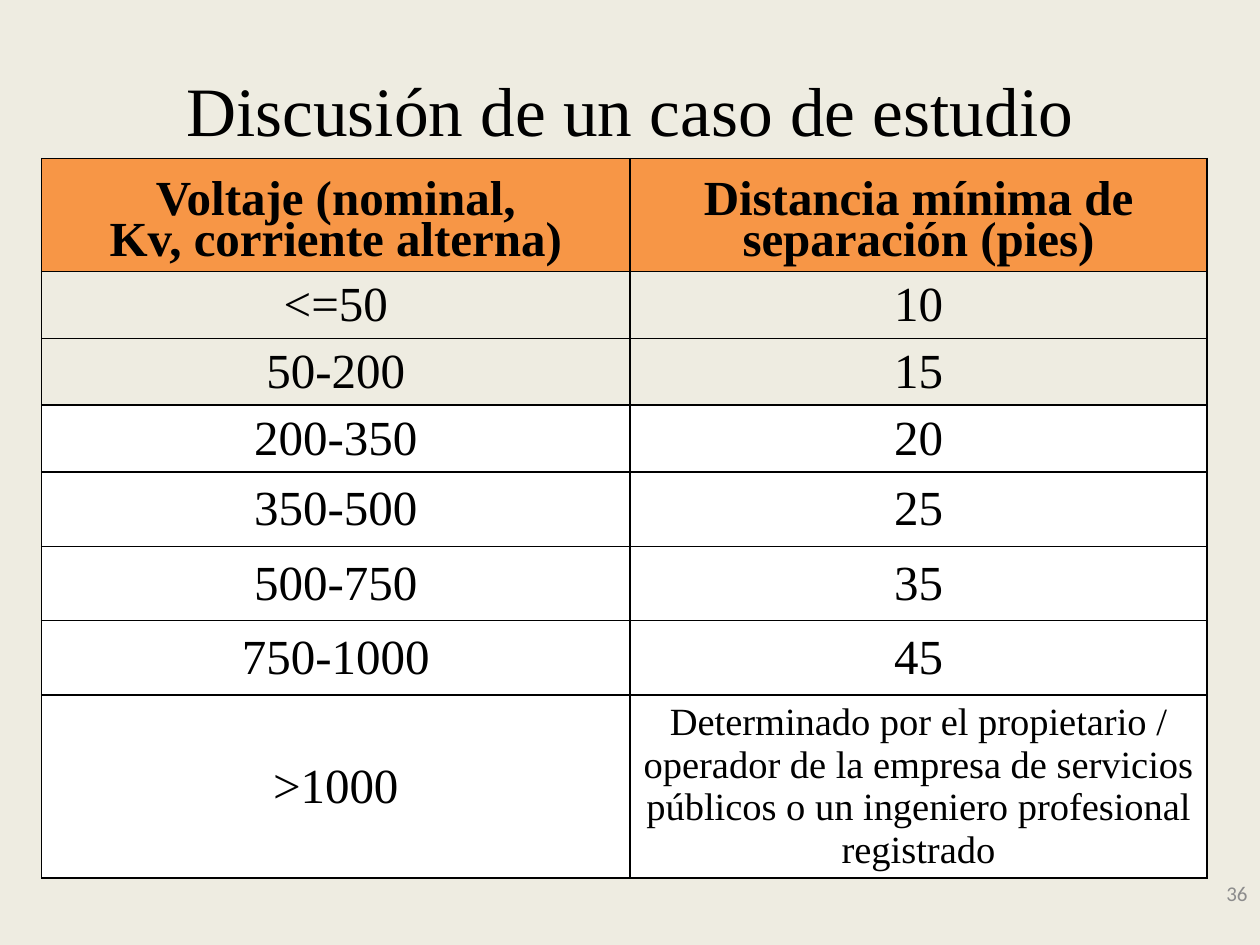
from lxml import etree
from pptx import Presentation
from pptx import util as u
from pptx.dml.color import RGBColor
from pptx.enum import text
from pptx.oxml import ns

INK, PAPER, ORANGE, WHITE, GREY = "000000", "EEECE1", "F79646", "FFFFFF", "8C8C8C"
SERIF, SANS = "Times New Roman", "Calibri"
CENTER, RIGHT = text.PP_ALIGN.CENTER, text.PP_ALIGN.RIGHT


def rgb(value):
    return RGBColor.from_string(value)


def set_attrs(obj, values):
    for name, value in values.items():
        setattr(obj, name, value)


class SlideBuilder:
    def __init__(self, prs):
        self.s = prs.slides.add_slide(prs.slide_layouts[6])
        self.font = {"name": SERIF, "size": u.Pt(28), "bold": False}

    def background(self, color):
        fill = self.s.background.fill
        fill.solid()
        fill.fore_color.rgb = rgb(color)

    def add_text(self, tf, content, color=INK, align=CENTER, spacing=None, **font):
        tf.word_wrap = True
        for i, line in enumerate(content.split("\n")):
            p = tf.add_paragraph() if i else tf.paragraphs[0]
            set_attrs(p, {"alignment": align, "line_spacing": spacing})
            r = p.add_run()
            r.text = line
            set_attrs(r.font, {**self.font, **font})
            r.font.color.rgb = rgb(color)

    def label(self, box, content, **style):
        sp = self.s.shapes.add_textbox(*map(u.Inches, box))
        sp.text_frame.vertical_anchor = text.MSO_ANCHOR.MIDDLE
        self.add_text(sp.text_frame, content, **style)

    def borders(self, cell):
        tc_pr = cell._tc.get_or_add_tcPr()
        for i, side in enumerate(("lnL", "lnR", "lnT", "lnB")):
            ln = etree.Element(ns.qn(f"a:{side}"), w=str(u.Pt(1)))
            fill = etree.SubElement(ln, ns.qn("a:solidFill"))
            etree.SubElement(fill, ns.qn("a:srgbClr"), val=INK)
            tc_pr.insert(i, ln)

    def cell(self, cell, content, fill, top=0.05, **style):
        set_attrs(cell, {
            "vertical_anchor": text.MSO_ANCHOR.MIDDLE,
            "margin_left": u.Inches(0.1), "margin_right": u.Inches(0.1),
            "margin_top": u.Inches(top), "margin_bottom": u.Inches(0.05),
        })
        if fill:
            cell.fill.solid()
            cell.fill.fore_color.rgb = rgb(fill)
        else:
            cell.fill.background()
        self.add_text(cell.text_frame, content, **style)
        self.borders(cell)

    def table(self, box, widths, heights):
        sp = self.s.shapes.add_table(len(heights), len(widths), *map(u.Inches, box))
        for col, width in zip(sp.table.columns, widths):
            col.width = u.Inches(width)
        for row, height in zip(sp.table.rows, heights):
            row.height = u.Inches(height)
        sp.height = u.Inches(box[3])
        return sp.table


def main():
    prs = Presentation()
    set_attrs(prs, {"slide_width": u.Inches(10), "slide_height": u.Inches(7.5)})
    slide = SlideBuilder(prs)
    slide.background(PAPER)

    # Clearance table
    headers = ("Voltaje (nominal,\nKv, corriente alterna)",
               "Distancia mínima de separación (pies)")
    clearances = [
        ("<=50", "10"), ("50-200", "15"), ("200-350", "20"), ("350-500", "25"),
        ("500-750", "35"), ("750-1000", "45"),
        (">1000", "Determinado por el propietario / operador de la empresa de "
                  "servicios públicos o un ingeniero profesional registrado"),
    ]
    table = slide.table((0.33, 1.26, 9.25, 5.97), (4.67, 4.58),
                        [0.82] + [0.47] * 3 + [0.59] * 4)
    for j, header in enumerate(headers):
        slide.cell(table.cell(0, j), header, ORANGE, top=0.19, spacing=0.76, bold=True)
    for i, row in enumerate(clearances, 1):
        for j, value in enumerate(row):
            size = 22 if len(value) > 20 else 28
            slide.cell(table.cell(i, j), value, WHITE if i > 2 else None, size=u.Pt(size))

    # Title and page number
    slide.label((0.5, 0.55, 9, 0.62), "Discusión de un caso de estudio", size=u.Pt(39.6))
    slide.label((7.75, 6.89, 2.25, 0.4), "36", color=GREY, align=RIGHT,
                name=SANS, size=u.Pt(12))

    prs.save("out.pptx")


if __name__ == "__main__":
    main()
